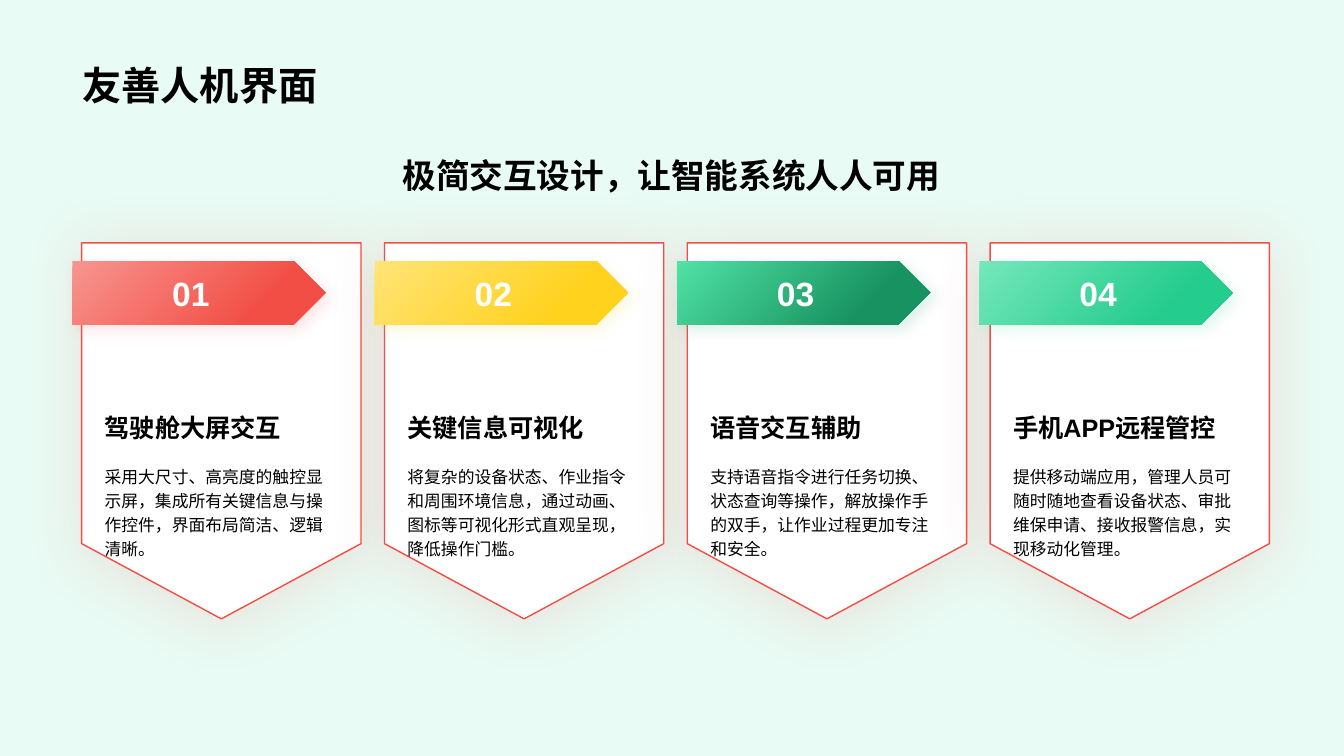
from lxml.etree import SubElement
from pptx import Presentation
from pptx.dml.color import RGBColor
from pptx.enum.shapes import MSO_SHAPE as SHAPE
from pptx.enum.text import MSO_ANCHOR as ANCHOR, PP_ALIGN as ALIGN
from pptx.oxml.ns import qn
from pptx.util import Inches, Pt

FONT, BLACK, WHITE, RED = "Arial", "000000", "FFFFFF", "F24E45"
CARD_LEFT, CARD_STEP = 6.08, 22.53
TAG_LEFT, TAG_STEP = 5.38, 22.5
TEXT_LEFT, TEXT_WIDTH = 7.05, 18.83
CARDS = [
    ("驾驶舱大屏交互", "F7958F", RED,
     "采用大尺寸、高亮度的触控显示屏，集成所有关键信息与操作控件，界面布局简洁、逻辑清晰。"),
    ("关键信息可视化", "FFE477", "FFD21D",
     "将复杂的设备状态、作业指令和周围环境信息，通过动画、图标等可视化形式直观呈现，降低操作门槛。"),
    ("语音交互辅助", "50E2A6", "189260",
     "支持语音指令进行任务切换、状态查询等操作，解放操作手的双手，让作业过程更加专注和安全。"),
    ("手机APP远程管控", "75E7BC", "24CC8D",
     "提供移动端应用，管理人员可随时随地查看设备状态、审批维保申请、接收报警信息，实现移动化管理。"),
]


def rgb(value):
    return RGBColor.from_string(value)


class Deck:
    """Draws styled elements on one slide, placed in percent of its size."""

    def __init__(self, width, height, background):
        self.prs = Presentation()
        self.prs.slide_width, self.prs.slide_height = Inches(width), Inches(height)
        self.slide = self.prs.slides.add_slide(self.prs.slide_layouts[6])
        fill = self.slide.background.fill
        fill.solid()
        fill.fore_color.rgb = rgb(background)

    def box(self, left, top, width, height):
        w, h = self.prs.slide_width, self.prs.slide_height
        return [round(share * size / 100) for share, size in
                ((left, w), (top, h), (width, w), (height, h))]

    def set_text(self, sp, text, size, color=BLACK, bold=True, align=ALIGN.LEFT,
                 anchor=ANCHOR.MIDDLE, wrap=True, spacing=None):
        tf = sp.text_frame
        tf.word_wrap, tf.vertical_anchor = wrap, anchor
        p = tf.paragraphs[0]
        p.text, p.alignment, p.line_spacing = text, align, spacing
        p.font.name, p.font.size, p.font.bold = FONT, Pt(size), bold
        p.font.color.rgb = rgb(color)

    def text(self, place, text, size, **style):
        sp = self.slide.shapes.add_textbox(*self.box(*place))
        self.set_text(sp, text, size, **style)

    def shadow(self, sp, color, blur, distance, angle):
        sp.shadow.inherit = False
        effects = sp._element.spPr.find(qn("a:effectLst"))
        outer = SubElement(effects, qn("a:outerShdw"), blurRad=str(Pt(blur)),
                           dist=str(Pt(distance)), dir=str(angle * 60000),
                           algn="t", rotWithShape="0")
        tint = SubElement(outer, qn("a:srgbClr"), val=color)
        SubElement(tint, qn("a:alpha"), val="15000")

    def card(self, place):
        sp = self.slide.shapes.add_shape(SHAPE.FLOWCHART_OFFPAGE_CONNECTOR, *self.box(*place))
        sp.fill.solid()
        sp.fill.fore_color.rgb = rgb(WHITE)
        sp.line.color.rgb = rgb(RED)
        sp.line.width = Pt(1)
        self.shadow(sp, RED, 42, 4, 90)

    def tag(self, place, text, light, dark):
        sp = self.slide.shapes.add_shape(SHAPE.PENTAGON, *self.box(*place))
        sp.fill.gradient()
        sp.fill.gradient_angle = 315
        for stop, color, position in zip(sp.fill.gradient_stops, (light, dark), (0, 0.75)):
            stop.color.rgb = rgb(color)
            stop.position = position
        sp.line.fill.background()
        self.shadow(sp, dark, 10, 5, 45)
        self.set_text(sp, text, 24, color=WHITE, align=ALIGN.CENTER, wrap=False)


def main():
    deck = Deck(13.33, 7.5, "E8FBF4")
    for i, (heading, light, dark, body) in enumerate(CARDS):
        left = TEXT_LEFT + i * CARD_STEP
        deck.card((CARD_LEFT + i * CARD_STEP, 32.13, 20.78, 49.73))
        deck.text((left, 47.47, TEXT_WIDTH, 11.73), heading, 18, anchor=ANCHOR.BOTTOM)
        deck.text((left, 60.53, TEXT_WIDTH, 17.47), body, 12, bold=False,
                  anchor=ANCHOR.TOP, spacing=1.2)
        deck.tag((TAG_LEFT + i * TAG_STEP, 34.53, TEXT_WIDTH, 8.4), f"{i + 1:02}", light, dark)
    deck.text((5.4, 18.13, 89.1, 10.13), "极简交互设计，让智能系统人人可用", 24, align=ALIGN.CENTER)
    deck.text((5.4, 1.87, 89.1, 13.07), "友善人机界面", 28, anchor=ANCHOR.BOTTOM)
    deck.prs.save("out.pptx")


if __name__ == "__main__":
    main()
